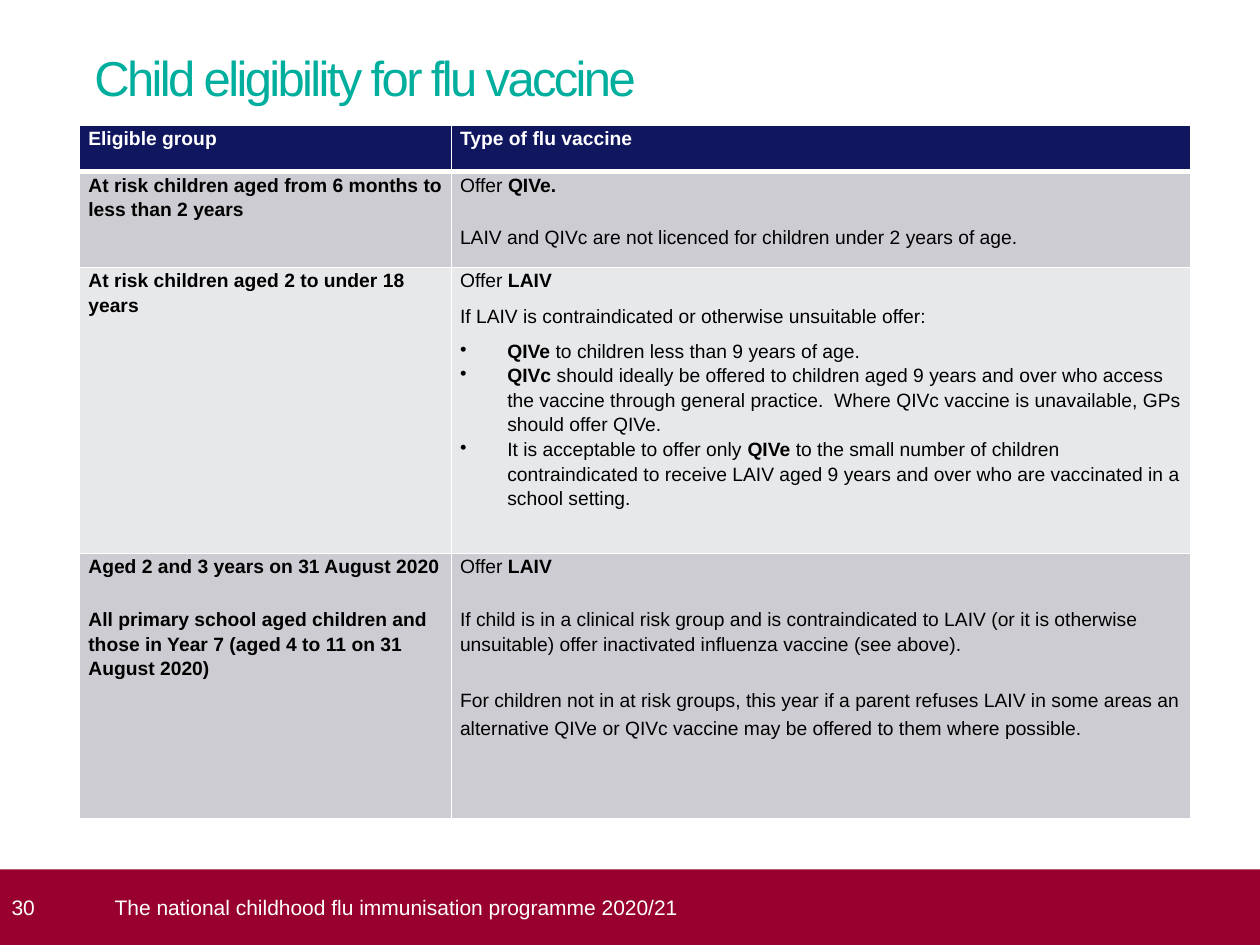
from lxml import etree
from pptx import Presentation
from pptx.dml.color import RGBColor
from pptx.enum.shapes import MSO_SHAPE
from pptx.enum.text import MSO_ANCHOR, PP_ALIGN
from pptx.oxml.ns import qn
from pptx.util import Pt

RECTANGLE = MSO_SHAPE.RECTANGLE
TOP, MIDDLE = MSO_ANCHOR.TOP, MSO_ANCHOR.MIDDLE
LEFT = PP_ALIGN.LEFT
WHITE, BLACK, TEAL, CRIMSON = "FFFFFF", "000000", "00AE9E", "98002E"
NAVY, GREY, LIGHT_GREY = "11175E", "CCCCD2", "E7E8EA"


def color(value):
    return RGBColor.from_string(value)


def add_text(frame, text, size=11, font_color=BLACK, anchor=TOP, left=0, right=0,
             line=None, before=0, after=0, bullet=False, tracking=None):
    """Add a paragraph; parts between ** marks are bold."""
    frame.word_wrap = True
    frame.vertical_anchor = anchor
    frame.margin_left, frame.margin_right = Pt(left), Pt(right)
    frame.margin_top = frame.margin_bottom = 0
    paragraph = frame.paragraphs[0]
    if paragraph.runs:
        paragraph = frame.add_paragraph()
    paragraph.alignment = LEFT
    paragraph.space_before, paragraph.space_after = Pt(before), Pt(after)
    if line:
        paragraph.line_spacing = line
    if bullet:
        properties = paragraph._p.get_or_add_pPr()
        properties.set("marL", str(Pt(27)))
        properties.set("indent", str(Pt(-27)))
        etree.SubElement(properties, qn("a:buChar"), char="•")
    for index, part in enumerate(text.split("**")):
        if part:
            run = paragraph.add_run()
            run.text = part
            run.font.name = "Arial"
            run.font.size = Pt(size)
            run.font.bold = index % 2 == 1
            run.font.color.rgb = color(font_color)
            if tracking:
                run._r.get_or_add_rPr().set("spc", str(int(tracking * 100)))


presentation = Presentation()
presentation.slide_width, presentation.slide_height = Pt(720), Pt(540)
slide = presentation.slides.add_slide(presentation.slide_layouts[6])

# Footer bar with page number
footer = slide.shapes.add_shape(RECTANGLE, Pt(0), Pt(496.8), Pt(720), Pt(43.2))
footer.shadow.inherit = False
footer.fill.solid()
footer.fill.fore_color.rgb = color(CRIMSON)
footer.line.fill.background()
add_text(footer.text_frame, "30", size=12, font_color=WHITE, anchor=MIDDLE,
         left=6.6, right=7.2)

# Title and footer text
title = slide.shapes.add_textbox(Pt(54), Pt(27.4), Pt(692), Pt(56.9))
add_text(title.text_frame, "Child eligibility for flu vaccine", size=28,
         font_color=TEAL, tracking=-1.5)
programme = slide.shapes.add_textbox(Pt(65.5), Pt(496.8), Pt(635), Pt(43.2))
add_text(programme.text_frame, "The national childhood flu immunisation programme 2020/21",
         size=12, font_color=WHITE, anchor=MIDDLE)

# Table content: height, fill, then the paragraphs of each cell with any special format
SPACED = {"before": 6, "after": 10}
TIGHT = {"before": 6}
FIRST_BULLET = {"before": 6, "bullet": True}
BULLET = {"bullet": True}
FIXED = {"before": 6, "after": 6, "line": Pt(16)}
rows = [
    (26.6, NAVY, [("**Eligible group**", SPACED)], [("**Type of flu vaccine**", SPACED)]),
    (54.7, GREY,
     [("**At risk children aged from 6 months to less than 2 years**", SPACED)],
     [("Offer **QIVe.**", SPACED),
      ("LAIV and QIVc are not licenced for children under 2 years of age.", SPACED)]),
    (163.4, LIGHT_GREY,
     [("**At risk children aged 2 to under 18 years**", SPACED)],
     [("Offer** LAIV**", TIGHT),
      ("If LAIV is contraindicated or otherwise unsuitable offer:", TIGHT),
      ("**QIVe **to children less than 9 years of age.", FIRST_BULLET),
      ("**QIVc** should ideally be offered to children aged 9 years and over who access "
       "the vaccine through general practice.  Where QIVc vaccine is unavailable, "
       "GPs should offer QIVe.", BULLET),
      ("It is acceptable to offer only **QIVe** to the small number of children "
       "contraindicated to receive LAIV aged 9 years and over who are vaccinated "
       "in a school setting.", BULLET)]),
    (151.9, GREY,
     [("**Aged 2 and 3 years on 31 August 2020**", SPACED),
      ("**All primary school aged children and those in Year 7 "
       "(aged 4 to 11 on 31 August 2020)**", SPACED)],
     [("Offer** LAIV**", SPACED),
      ("If child is in a clinical risk group and is contraindicated to LAIV (or it is "
       "otherwise unsuitable) offer inactivated influenza vaccine (see above).", SPACED),
      ("For children not in at risk groups, this year if a parent refuses LAIV in some "
       "areas an alternative QIVe or QIVc vaccine may be offered to them where possible.",
       FIXED)]),
]

# Eligibility table
table = slide.shapes.add_table(len(rows), 2, Pt(45.5), Pt(71.5), Pt(635), Pt(396.6)).table
table.columns[0].width, table.columns[1].width = Pt(212.4), Pt(422.6)
for row_index, (height, fill, *cells) in enumerate(rows):
    table.rows[row_index].height = Pt(height)
    for column_index, paragraphs in enumerate(cells):
        cell = table.cell(row_index, column_index)
        cell.fill.solid()
        cell.fill.fore_color.rgb = color(fill)
        cell.margin_left = cell.margin_right = Pt(5)
        cell.margin_top = cell.margin_bottom = 0
        for text, style in paragraphs:
            add_text(cell.text_frame, text, font_color=WHITE if row_index == 0 else BLACK,
                     **{"line": 1.15, **style})

        # White borders, thicker under the header
        widths = {"lnL": 1, "lnR": 1, "lnT": 3 if row_index == 1 else 1,
                  "lnB": 3 if row_index == 0 else 1}
        cell_properties = cell._tc.get_or_add_tcPr()
        for position, (side, width) in enumerate(widths.items()):
            border = etree.Element(qn("a:" + side), w=str(Pt(width)))
            border_fill = etree.SubElement(border, qn("a:solidFill"))
            etree.SubElement(border_fill, qn("a:srgbClr"), val=WHITE)
            cell_properties.insert(position, border)

presentation.save("out.pptx")
